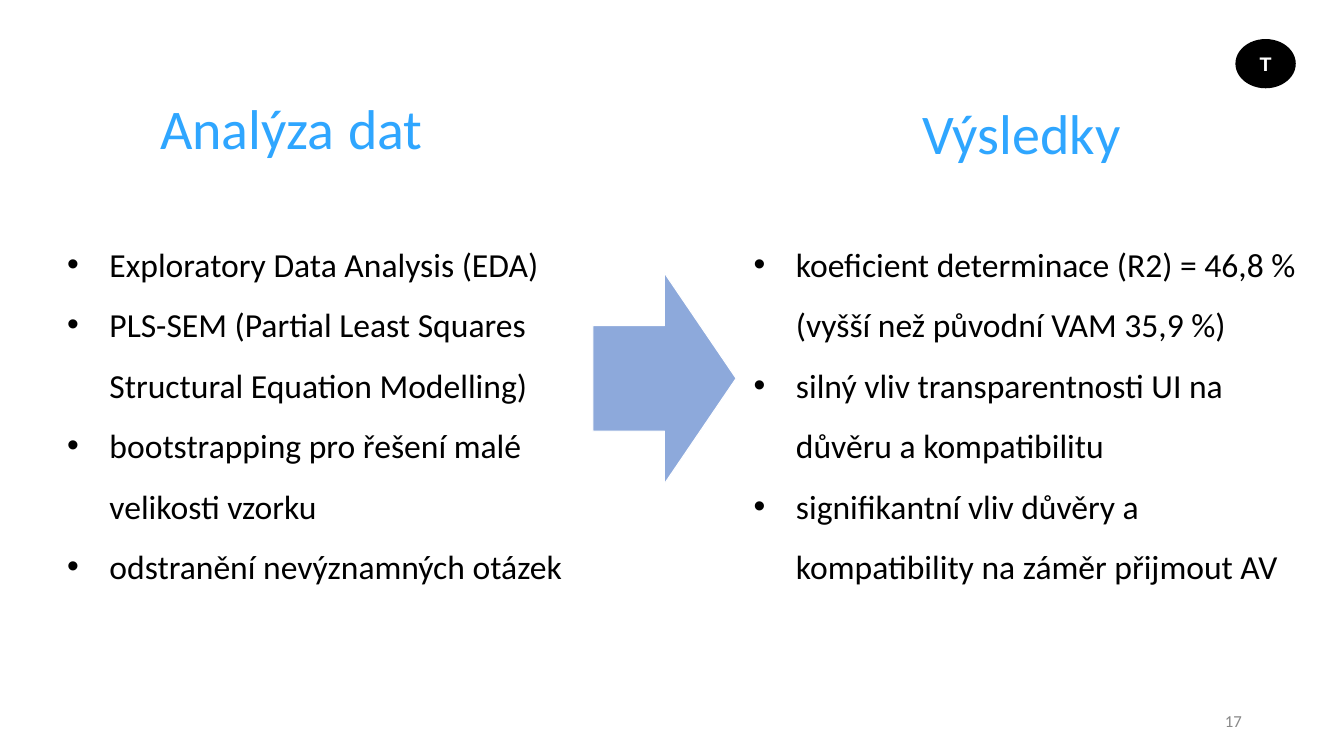
from pptx import Presentation
from pptx.dml.color import RGBColor
from pptx.enum.shapes import MSO_SHAPE as Preset
from pptx.enum.text import MSO_ANCHOR as Anchor, MSO_AUTO_SIZE as AutoSize, PP_ALIGN as Align
from pptx.oxml import parse_xml
from pptx.oxml.ns import nsdecls
from pptx.util import Cm, Pt

BLUE = RGBColor(0x2F, 0xA6, 0xFF)
ARROW_BLUE = RGBColor(0x8D, 0xA9, 0xDB)
BLACK = RGBColor(0, 0, 0)
GREY = RGBColor(0x88, 0x88, 0x88)
WHITE = RGBColor(0xFF, 0xFF, 0xFF)

ANALYSIS_HEADING = "Analýza dat"
RESULTS_HEADING = "Výsledky"
ANALYSIS_POINTS = [
    "Exploratory Data Analysis (EDA)",
    "PLS-SEM (Partial Least Squares Structural Equation Modelling)",
    "bootstrapping pro řešení malé velikosti vzorku",
    "odstranění nevýznamných otázek",
]
RESULTS_POINTS = [
    "koeficient determinace (R2) = 46,8 % (vyšší než původní VAM 35,9 %)",
    "silný vliv transparentnosti UI na důvěru a kompatibilitu",
    "signifikantní vliv důvěry a kompatibility na záměr přijmout AV",
]
PAGE_NUMBER = "17"
BADGE_LETTER = "T"

HEADING_FONT = {"name": "Calibri", "size": Pt(40), "color": BLUE}
GAP_FONT = {"name": "Calibri", "size": Pt(44), "color": BLACK}
POINT_FONT = {"name": "Calibri", "size": Pt(24), "color": BLACK}
NUMBER_FONT = {"name": "Calibri", "size": Pt(12), "color": GREY}
BADGE_FONT = {"name": "Arial", "size": Pt(14), "bold": True, "color": WHITE}

RESULTS_LEFT = 18.54
POINTS_TOP, POINTS_HEIGHT = 5.51, 13.16
POINT_INDENT, BULLET_HANG = Cm(1.27), Cm(1.07)


def place(box):
    """Turn a box in centimetres into lengths."""
    return [Cm(side) for side in box]


def add_run(paragraph, text, font_format):
    """Add one run with the given font values."""
    run = paragraph.add_run()
    run.text = text
    for key, value in font_format.items():
        if key == "color":
            run.font.color.rgb = value
        else:
            setattr(run.font, key, value)


def set_frame(frame, anchor=Anchor.TOP):
    """Wrap the text and fix its anchor, and return its first paragraph."""
    values = {"word_wrap": True, "auto_size": AutoSize.NONE, "vertical_anchor": anchor}
    for key, value in values.items():
        setattr(frame, key, value)
    return frame.paragraphs[0]


def add_text(slide, box, text, font_format, align, anchor, spacing=1.0):
    """Add a text box that holds one line."""
    line = set_frame(slide.shapes.add_textbox(*place(box)).text_frame, anchor)
    line.alignment, line.line_spacing = align, spacing
    add_run(line, text, font_format)


def add_points(slide, left, width, points):
    """Add a column of bulleted points."""
    box = (left, POINTS_TOP, width, POINTS_HEIGHT)
    frame = slide.shapes.add_textbox(*place(box)).text_frame
    first = set_frame(frame)
    first.space_before = Pt(10)
    for index, point in enumerate(points):
        paragraph = frame.add_paragraph() if index else first
        paragraph.line_spacing = 1.5
        add_run(paragraph, point, POINT_FONT)
        properties = paragraph._p.get_or_add_pPr()
        properties.set("marL", str(POINT_INDENT))
        properties.set("indent", str(-BULLET_HANG))
        for bullet in (
            f'<a:buClr {nsdecls("a")}><a:srgbClr val="{BLACK}"/></a:buClr>',
            f'<a:buFont {nsdecls("a")} typeface="Arial"/>',
            f'<a:buChar {nsdecls("a")} char="•"/>',
        ):
            properties.append(parse_xml(bullet))


def add_preset(slide, preset, box, fill, line, line_width):
    """Add a filled preset shape without a shadow."""
    shape = slide.shapes.add_shape(preset, *place(box))
    shape.shadow.inherit = False
    shape.fill.solid()
    shape.fill.fore_color.rgb = fill
    shape.line.color.rgb = line
    shape.line.width = Pt(line_width)
    return shape


def main():
    """Build the slide on data analysis and results."""
    deck = Presentation()
    deck.slide_width, deck.slide_height = Cm(33.87), Cm(19.05)
    slide = deck.slides.add_slide(deck.slide_layouts[5])

    title = slide.shapes.title
    title.left, title.top, title.width, title.height = place((3.78, 2.31, 14.33, 2.29))
    heading = set_frame(title.text_frame)
    heading.alignment, heading.line_spacing = Align.LEFT, 0.9
    first_word, last_word = ANALYSIS_HEADING.split()
    add_run(heading, first_word, HEADING_FONT)
    add_run(heading, " ", GAP_FONT)
    add_run(heading, last_word, HEADING_FONT)

    add_text(slide, (23.93, 17.65, 7.62, 1.02), PAGE_NUMBER, NUMBER_FONT,
             Align.RIGHT, Anchor.MIDDLE)

    badge = add_preset(slide, Preset.OVAL, (31.17, 1.02, 1.45, 1.17), BLACK, BLACK, 2)
    letter = set_frame(badge.text_frame, Anchor.MIDDLE)
    letter.alignment = Align.CENTER
    add_run(letter, BADGE_LETTER, BADGE_FONT)

    add_points(slide, 1.24, 13.87, ANALYSIS_POINTS)
    add_text(slide, (RESULTS_LEFT, 2.03, 14.4, 2.29), RESULTS_HEADING, HEADING_FONT,
             Align.CENTER, Anchor.BOTTOM, 0.9)
    add_points(slide, RESULTS_LEFT, 14.99, RESULTS_POINTS)
    add_preset(slide, Preset.RIGHT_ARROW, (14.94, 6.88, 3.61, 5.31), ARROW_BLUE, WHITE, 0.75)

    deck.save("out.pptx")


if __name__ == "__main__":
    main()
